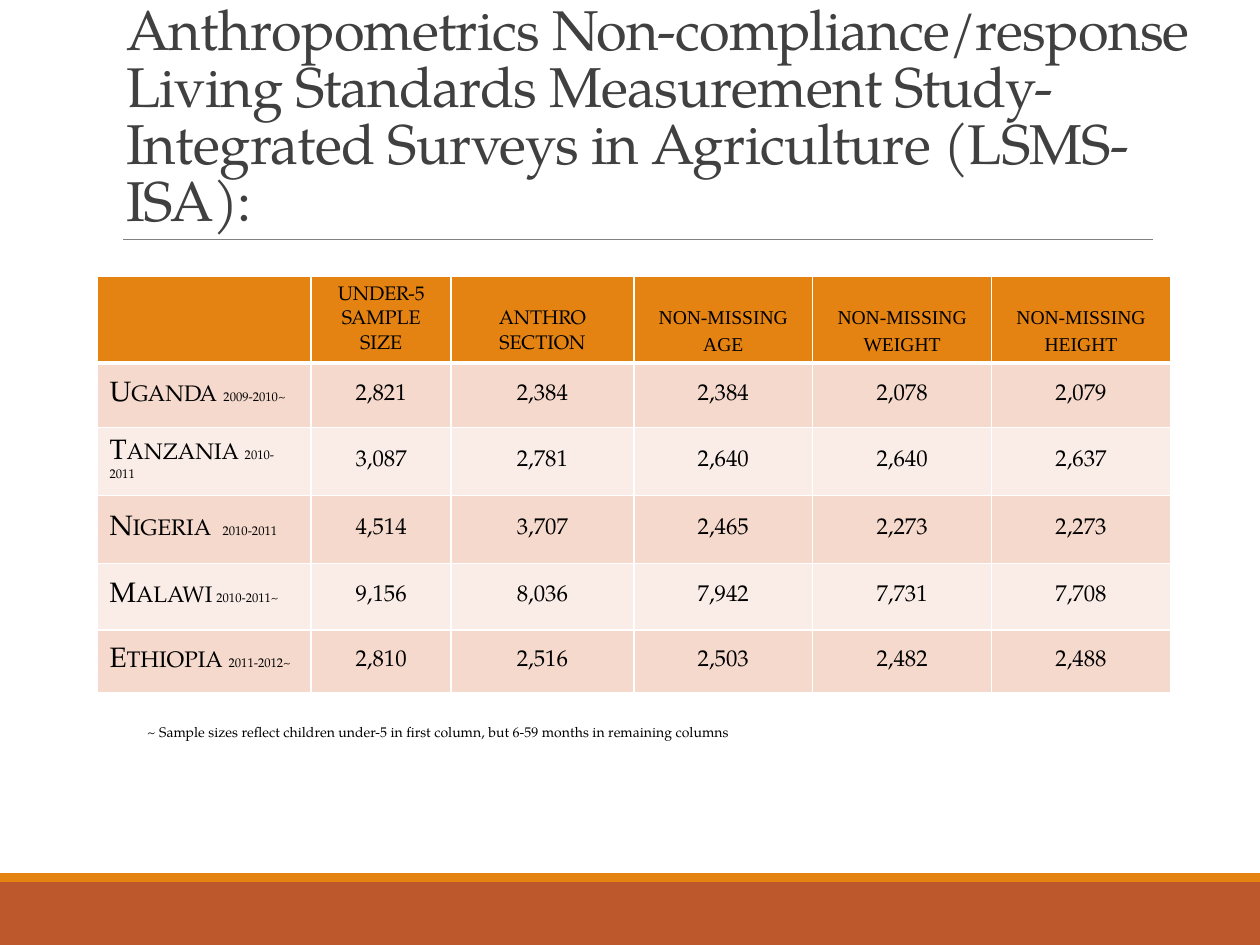
import dataclasses
import typing

import lxml.etree
import pptx
import pptx.dml.color
import pptx.enum.shapes
import pptx.enum.text
import pptx.oxml
import pptx.oxml.ns
import pptx.util

Inches = pptx.util.Inches
Pt = pptx.util.Pt
ANCHOR = pptx.enum.text.MSO_ANCHOR
CENTER = pptx.enum.text.PP_ALIGN.CENTER
SERIF = "TeX Gyre Pagella"
COLORS = {
    "rust": "BD582C",
    "orange": "E48312",
    "rule": "808080",
    "title": "404040",
    "text": "000000",
    "border": "FFFFFF",
    "dark_band": "F5D9CC",
    "light_band": "FAEDE7",
}


@dataclasses.dataclass
class Run:
    text: str
    size: float
    font: str = SERIF
    small_caps: bool = False
    color: str = "text"


@dataclasses.dataclass
class Bar:
    top: float
    height: float
    color: str


@dataclasses.dataclass
class Country:
    label: list[tuple[str, float]]
    values: list[str]


BARS = [Bar(7, 0.5, "rust"), Bar(6.93, 0.07, "orange")]
HEADERS = [
    ("under-5 sample size", SERIF),
    ("anthro section", SERIF),
    ("non-missing age", "Times New Roman"),
    ("non-missing weight", "Times New Roman"),
    ("non-missing height", "Times New Roman"),
]
COUNTRIES = [
    Country([("Uganda", 16), ("  2009-2010~", 9)], ["2,821", "2,384", "2,384", "2,078", "2,079"]),
    Country([("Tanzania ", 16), ("2010-2011", 9)], ["3,087", "2,781", "2,640", "2,640", "2,637"]),
    Country([("Nigeria  ", 16), ("2010-2011", 9)], ["4,514", "3,707", "2,465", "2,273", "2,273"]),
    Country([("Malawi", 16), (" ", 11), ("2010-2011~", 9)], ["9,156", "8,036", "7,942", "7,731", "7,708"]),
    Country([("Ethiopia ", 16), ("2011-2012~", 9)], ["2,810", "2,516", "2,503", "2,482", "2,488"]),
]
COL_WIDTHS = [1.7, 1.11, 1.45, 1.42, 1.42, 1.42]
ROW_HEIGHTS = [0.41, 0.51, 0.54, 0.54, 0.53, 0.5]


def rgb(name: str) -> pptx.dml.color.RGBColor:
    return pptx.dml.color.RGBColor.from_string(COLORS[name])


def set_attrs(obj: typing.Any, values: dict[str, typing.Any]) -> None:
    for name, value in values.items():
        setattr(obj, name, value)


def add_run(p: typing.Any, run: Run) -> typing.Any:
    r = p.add_run()
    r.text = run.text
    set_attrs(r.font, {"size": Pt(run.size), "name": run.font, "bold": False})
    r.font.color.rgb = rgb(run.color)
    if run.small_caps:
        r._r.get_or_add_rPr().set("cap", "small")
    return r


def add_bar(slide: typing.Any, bar: Bar) -> None:
    sp = slide.shapes.add_shape(
        pptx.enum.shapes.MSO_SHAPE.RECTANGLE, 0, Inches(bar.top), Inches(10), Inches(bar.height)
    )
    sp.shadow.inherit = False
    sp.fill.solid()
    sp.fill.fore_color.rgb = rgb(bar.color)
    sp.line.fill.background()


def add_rule(slide: typing.Any) -> None:
    line = slide.shapes.add_connector(
        pptx.enum.shapes.MSO_CONNECTOR.STRAIGHT, Inches(0.98), Inches(1.9), Inches(9.15), Inches(1.9)
    )
    line.line.color.rgb = rgb("rule")
    line.line.width = Pt(0.5)
    lxml.etree.SubElement(line._element.spPr, pptx.oxml.ns.qn("a:effectLst"))


def add_title(slide: typing.Any) -> None:
    title = slide.shapes.title
    set_attrs(title, {"left": Inches(0.9), "top": Inches(0.31), "width": Inches(8.87), "height": Inches(1.59)})
    tf = title.text_frame
    set_attrs(tf, {
        "word_wrap": True,
        "auto_size": pptx.enum.text.MSO_AUTO_SIZE.NONE,
        "vertical_anchor": ANCHOR.BOTTOM,
    })
    p = tf.paragraphs[0]
    set_attrs(p, {"alignment": pptx.enum.text.PP_ALIGN.LEFT, "line_spacing": 0.85})
    lines = [
        "Anthropometrics Non-compliance/response ",
        "Living Standards Measurement Study-Integrated Surveys in Agriculture (LSMS-ISA):",
    ]
    for i, text in enumerate(lines):
        if i:
            p.add_line_break()
        r = add_run(p, Run(text, 32, color="title"))
        r._r.get_or_add_rPr().set("spc", "-50")


def set_borders(cell: typing.Any, bottom: float) -> None:
    tc_pr = cell._tc.get_or_add_tcPr()
    for side, width in {"L": 1, "R": 1, "T": 1, "B": bottom}.items():
        ln = lxml.etree.SubElement(tc_pr, pptx.oxml.ns.qn(f"a:ln{side}"), w=str(Pt(width)))
        fill = lxml.etree.SubElement(ln, pptx.oxml.ns.qn("a:solidFill"))
        lxml.etree.SubElement(fill, pptx.oxml.ns.qn("a:srgbClr"), val=COLORS["border"])


def fill_cell(cell: typing.Any, runs: list[Run], fill: str, anchor: typing.Any,
              align: typing.Any = None, bottom: float = 1) -> None:
    set_borders(cell, bottom)
    cell.fill.solid()
    cell.fill.fore_color.rgb = rgb(fill)
    cell.vertical_anchor = anchor
    p = cell.text_frame.paragraphs[0]
    p.alignment = align
    for run in runs:
        add_run(p, run)


def add_survey_table(slide: typing.Any) -> None:
    table = slide.shapes.add_table(
        len(ROW_HEIGHTS), len(COL_WIDTHS), Inches(0.77), Inches(2.19), Inches(8.54), Inches(3.43)
    ).table
    set_attrs(table, {"first_row": False, "horz_banding": False})
    for column, width in zip(table.columns, COL_WIDTHS):
        column.width = Inches(width)
    for row, height in zip(table.rows, ROW_HEIGHTS):
        row.height = Inches(height)

    fill_cell(table.cell(0, 0), [], "orange", ANCHOR.BOTTOM, bottom=3)
    for c, (text, font) in enumerate(HEADERS, 1):
        fill_cell(table.cell(0, c), [Run(text, 14, font, True)], "orange", ANCHOR.BOTTOM, CENTER, 3)
    for i, country in enumerate(COUNTRIES, 1):
        band = "dark_band" if i % 2 else "light_band"
        label = [Run(text, size, small_caps=True) for text, size in country.label]
        fill_cell(table.cell(i, 0), label, band, ANCHOR.MIDDLE)
        for c, value in enumerate(country.values, 1):
            fill_cell(table.cell(i, c), [Run(value, 13)], band, ANCHOR.MIDDLE, CENTER)


def add_footnote(slide: typing.Any) -> None:
    tf = slide.shapes.add_textbox(Inches(1.07), Inches(5.69), Inches(7.87), Inches(0.24)).text_frame
    set_attrs(tf, {"word_wrap": True, "auto_size": pptx.enum.text.MSO_AUTO_SIZE.SHAPE_TO_FIT_TEXT})
    note = "~ Sample sizes reflect children under-5 in first column, but 6-59 months in remaining columns"
    add_run(tf.paragraphs[0], Run(note, 8))


def main() -> None:
    prs = pptx.Presentation()
    set_attrs(prs, {"slide_width": Inches(10), "slide_height": Inches(7.5)})
    slide = prs.slides.add_slide(prs.slide_layouts[5])
    for bar in BARS:
        add_bar(slide, bar)
    add_rule(slide)
    add_title(slide)
    add_survey_table(slide)
    add_footnote(slide)
    prs.save("out.pptx")


if __name__ == "__main__":
    main()
